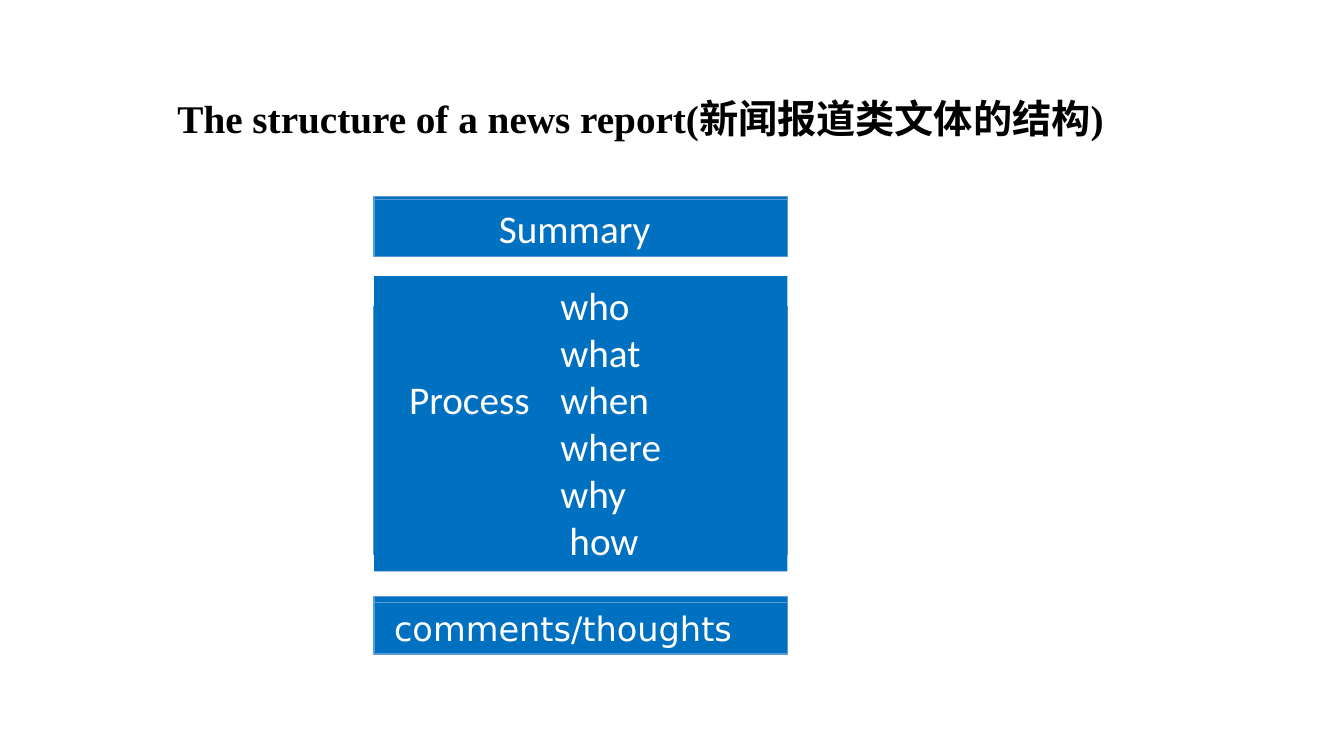
import pptx
import pptx.util
import pptx.dml.color
import pptx.enum.shapes
import pptx.enum.text
import pptx.oxml
import pptx.oxml.ns
from pptx.util import Inches, Pt

COLORS = {"panel": "0070C0", "border": "5B9BD5", "label": "FFFFFF", "heading": "000000"}
HEADING = "The structure of a news report(新闻报道类文体的结构)"
LEFT, WIDTH = 3.71, 4.1

PANELS = [(1.95, 0.57), (3.04, 2.46), (5.92, 0.57)]
SECTIONS = [
    (1.98, 0.57, True, "Calibri", 28, [("\tSummary", [1.14])]),
    (2.74, 2.93, False, "Calibri", 28, [
        ("\twho", [1.75]),
        ("\twhat", [1.75]),
        ("\tProcess\twhen", [0.25, 1.75]),
        ("\twhere", [1.75]),
        ("\twhy", [1.75]),
        ("\thow", [1.84]),
    ]),
    (5.98, 0.5, True, "DejaVu Sans", 24, [("\tcomments/thoughts", [0.1])]),
]


def color(name):
    return pptx.dml.color.RGBColor.from_string(COLORS[name])


def add_panel(slide, top, height, bordered=True):
    panel = slide.shapes.add_shape(
        pptx.enum.shapes.MSO_SHAPE.RECTANGLE,
        Inches(LEFT), Inches(top), Inches(WIDTH), Inches(height))
    panel.shadow.inherit = False
    panel.fill.solid()
    panel.fill.fore_color.rgb = color("panel")
    if bordered:
        panel.line.color.rgb = color("border")
        panel.line.width = Pt(0.75)
    else:
        panel.line.fill.background()
    return panel


def style(paragraph, font, size, ink):
    paragraph.font.name = font
    paragraph.font.size = Pt(size)
    paragraph.font.color.rgb = color(ink)


def set_tab_stops(paragraph, stops):
    properties = paragraph._p.get_or_add_pPr()
    tab_list = pptx.oxml.parse_xml("<a:tabLst %s/>" % pptx.oxml.ns.nsdecls("a"))
    for stop in stops:
        tab_list.append(pptx.oxml.parse_xml(
            '<a:tab %s pos="%d" algn="l"/>' % (pptx.oxml.ns.nsdecls("a"), Inches(stop))))
    properties.insert(0, tab_list)


def add_heading(slide):
    heading = slide.shapes.title
    heading.left, heading.top = Inches(1.66), Inches(1.07)
    heading.width, heading.height = Inches(11.37), Inches(0.41)
    frame = heading.text_frame
    frame.text = HEADING
    frame.word_wrap = True
    frame.auto_size = pptx.enum.text.MSO_AUTO_SIZE.NONE
    frame.vertical_anchor = pptx.enum.text.MSO_ANCHOR.TOP
    line = frame.paragraphs[0]
    line.alignment = pptx.enum.text.PP_ALIGN.JUSTIFY
    line.line_spacing = Pt(20)
    style(line, "Times New Roman", 28, "heading")
    line.font.bold = True


def add_section(slide, top, height, bordered, font, size, lines):
    frame = add_panel(slide, top, height, bordered).text_frame
    frame.word_wrap = True
    frame.vertical_anchor = pptx.enum.text.MSO_ANCHOR.TOP
    for index, (text, stops) in enumerate(lines):
        line = frame.add_paragraph() if index else frame.paragraphs[0]
        line.text = text
        line.alignment = pptx.enum.text.PP_ALIGN.LEFT
        style(line, font, size, "label")
        set_tab_stops(line, stops)


def main():
    deck = pptx.Presentation()
    deck.slide_width, deck.slide_height = Inches(13.33), Inches(7.5)
    slide = deck.slides.add_slide(deck.slide_layouts[5])
    add_heading(slide)
    for top, height in PANELS:
        add_panel(slide, top, height)
    for section in SECTIONS:
        add_section(slide, *section)
    deck.save("out.pptx")


if __name__ == "__main__":
    main()
